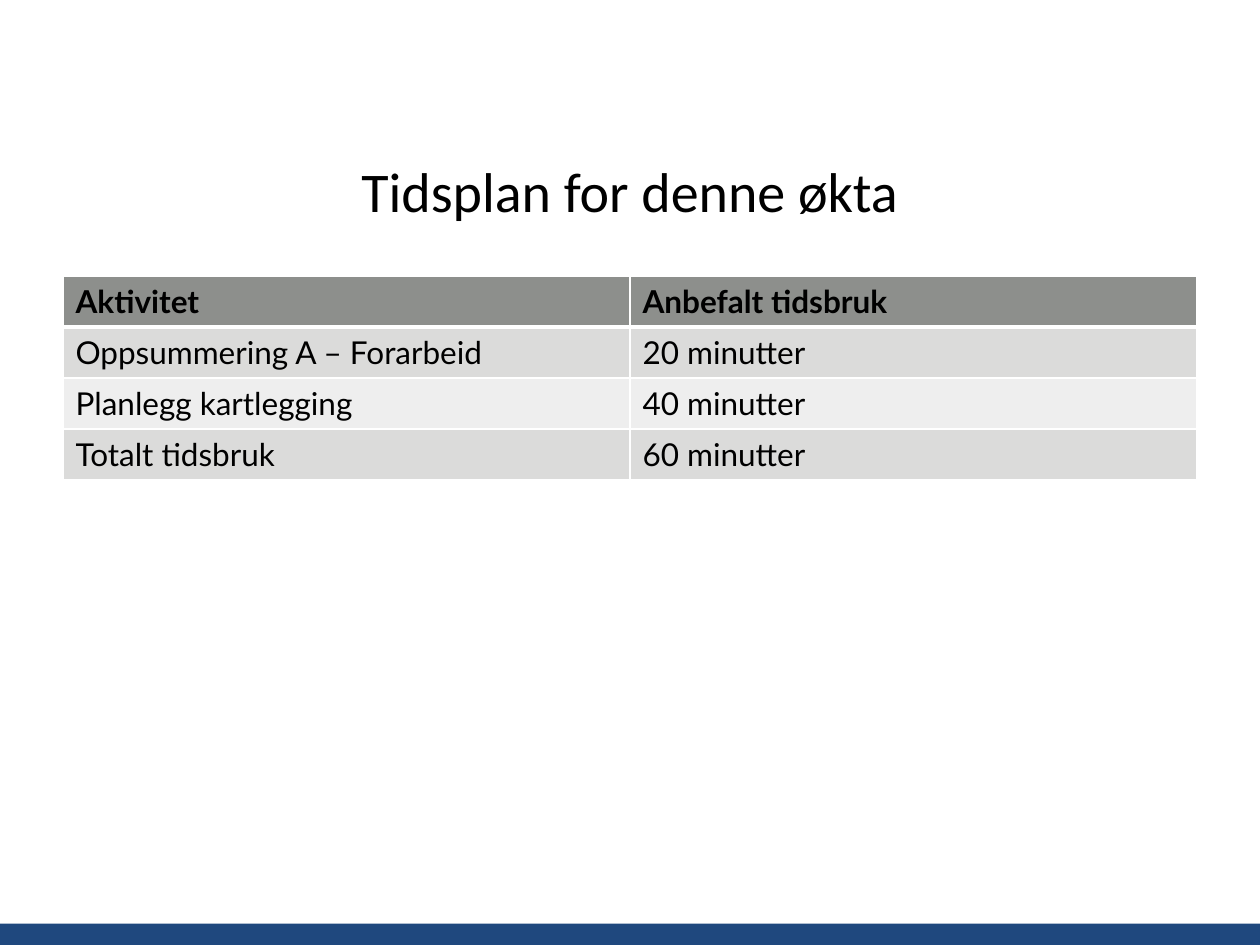
import pptx
import pptx.dml.color
import pptx.enum.shapes
import pptx.enum.text
import pptx.oxml.ns
import pptx.util
from lxml import etree
from pptx.util import Inches

COLORS = {
    "text": "000000",
    "footer": "1F487E",
    "header": "8D8F8C",
    "odd_row": "DBDBDA",
    "even_row": "EEEEEE",
    "border": "FFFFFF",
}

SCHEDULE = [
    ("Aktivitet", "Anbefalt tidsbruk"),
    ("Oppsummering A – Forarbeid", "20 minutter"),
    ("Planlegg kartlegging", "40 minutter"),
    ("Totalt tidsbruk", "60 minutter"),
]


def color(name):
    return pptx.dml.color.RGBColor.from_string(COLORS[name])


def add_run(paragraph, text, font_name, size, bold=False):
    run = paragraph.add_run()
    run.text = text
    run.font.name = font_name
    run.font.size = pptx.util.Pt(size)
    run.font.bold = bold
    run.font.color.rgb = color("text")


def add_footer_bar(slide):
    bar = slide.shapes.add_shape(
        pptx.enum.shapes.MSO_SHAPE.RECTANGLE,
        Inches(0), Inches(7.33), Inches(10), Inches(0.17))
    bar.shadow.inherit = False
    bar.fill.solid()
    bar.fill.fore_color.rgb = color("footer")
    bar.line.fill.background()


def add_title(slide, text):
    title = slide.shapes.add_textbox(Inches(0.5), Inches(1), Inches(9), Inches(1.01))
    frame = title.text_frame
    frame.word_wrap = True
    frame.vertical_anchor = pptx.enum.text.MSO_ANCHOR.MIDDLE
    paragraph = frame.paragraphs[0]
    paragraph.alignment = pptx.enum.text.PP_ALIGN.CENTER
    add_run(paragraph, text, "Calibri", 32)


def set_border(cell, side, width):
    """Draw one side of a cell: L, R, T or B, with the width in points."""
    qn = pptx.oxml.ns.qn
    line = etree.SubElement(cell._tc.get_or_add_tcPr(), qn(f"a:ln{side}"),
                            w=str(pptx.util.Pt(width)))
    fill = etree.SubElement(line, qn("a:solidFill"))
    etree.SubElement(fill, qn("a:srgbClr"), val=COLORS["border"])


def fill_cell(cell, text, row_index):
    is_header = row_index == 0
    # Borders come before the fill in the cell properties
    for side in "LRTB":
        below_header = (row_index, side) in ((0, "B"), (1, "T"))
        set_border(cell, side, 3 if below_header else 1)
    cell.fill.solid()
    band = "odd_row" if row_index % 2 else "even_row"
    cell.fill.fore_color.rgb = color("header" if is_header else band)
    add_run(cell.text_frame.paragraphs[0], text, "Lato", 18, is_header)


def add_schedule(slide, rows):
    row_height = Inches(0.405)
    table = slide.shapes.add_table(
        len(rows), len(rows[0]), Inches(0.5), Inches(2.19),
        Inches(9), row_height * len(rows)).table
    for row_index, texts in enumerate(rows):
        table.rows[row_index].height = row_height
        for column_index, text in enumerate(texts):
            fill_cell(table.cell(row_index, column_index), text, row_index)


def main():
    presentation = pptx.Presentation()
    presentation.slide_width = Inches(10)
    presentation.slide_height = Inches(7.5)
    slide = presentation.slides.add_slide(presentation.slide_layouts[6])

    add_footer_bar(slide)
    add_title(slide, "Tidsplan for denne økta")
    add_schedule(slide, SCHEDULE)

    presentation.save("out.pptx")


if __name__ == "__main__":
    main()
